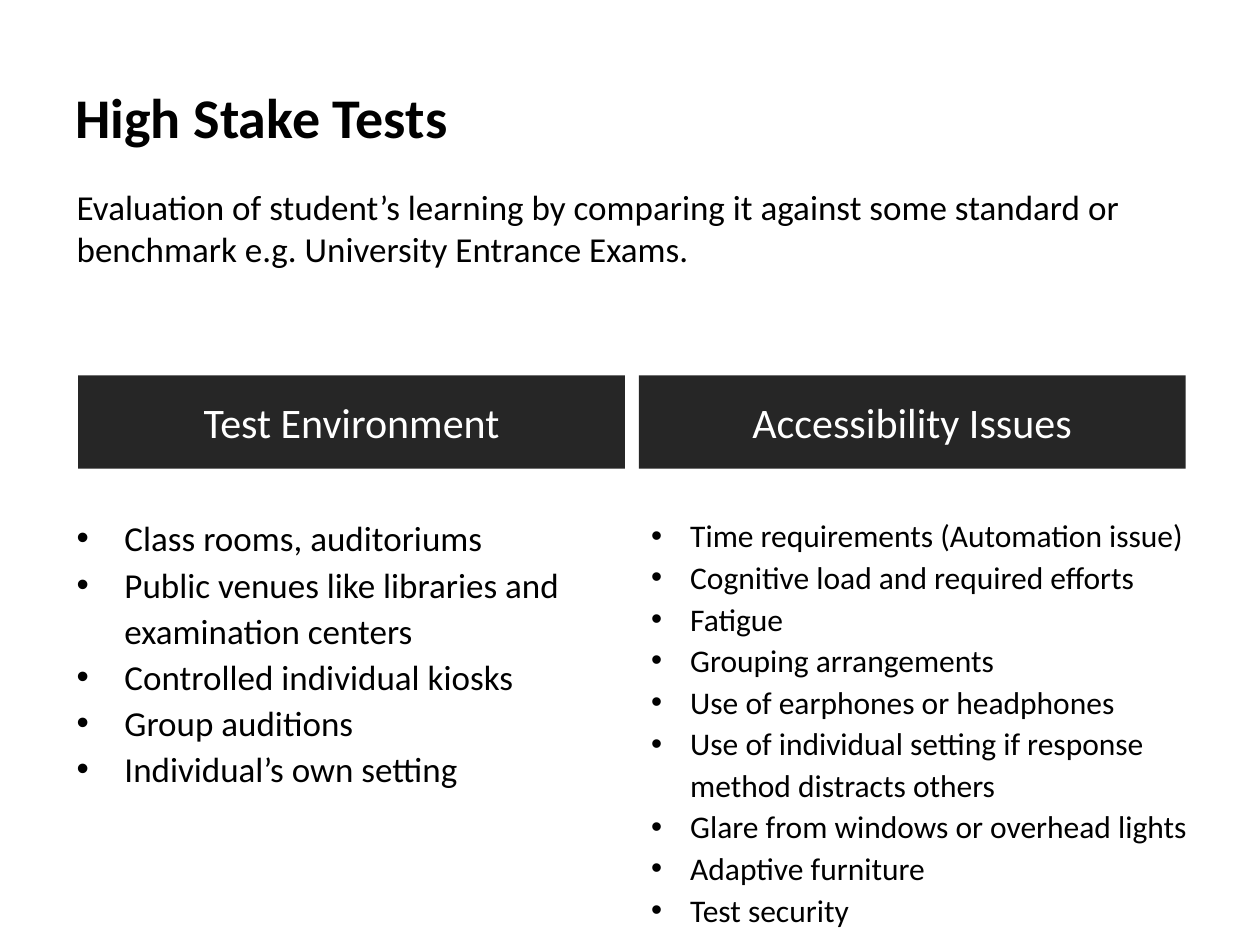
from lxml.etree import SubElement
from pptx import Presentation
from pptx.dml.color import RGBColor
from pptx.enum.shapes import MSO_SHAPE
from pptx.enum.text import MSO_ANCHOR, PP_ALIGN
from pptx.oxml.ns import qn
from pptx.util import Inches, Pt

FONT = "Calibri"
BLACK = RGBColor(0x00, 0x00, 0x00)
WHITE = RGBColor(0xFF, 0xFF, 0xFF)
CHARCOAL = RGBColor(0x26, 0x26, 0x26)

ENVIRONMENTS = [
    "Class rooms, auditoriums",
    "Public venues like libraries and examination centers",
    "Controlled individual kiosks",
    "Group auditions",
    "Individual’s own setting",
]
ISSUES = [
    "Time requirements (Automation issue)",
    "Cognitive load and required efforts",
    "Fatigue",
    "Grouping arrangements",
    "Use of earphones or headphones",
    "Use of individual setting if response\nmethod distracts others",
    "Glare from windows or overhead lights",
    "Adaptive furniture",
    "Test security",
]


def write_text(p, text, size=20, color=BLACK, bold=False, align=PP_ALIGN.LEFT):
    """Fill a paragraph with formatted text."""
    p.text = text
    p.alignment = align
    for r in p.runs:
        r.font.name = FONT
        r.font.size = Pt(size)
        r.font.bold = bold
        r.font.color.rgb = color


def set_indent(p, left, first=0, bullet=None):
    """Set the margin, first-line indent and optional bullet of a paragraph."""
    pPr = p._p.get_or_add_pPr()
    pPr.set("marL", str(Inches(left)))
    pPr.set("indent", str(Inches(first)))
    if bullet:
        SubElement(pPr, qn("a:buFont"), typeface="Arial")
        SubElement(pPr, qn("a:buChar"), char=bullet)


def add_text_box(s, left, top, width, height, anchor=MSO_ANCHOR.TOP):
    """Add a wrapping text box and return its text frame."""
    tf = s.shapes.add_textbox(
        Inches(left), Inches(top), Inches(width), Inches(height)
    ).text_frame
    tf.word_wrap = True
    tf.vertical_anchor = anchor
    return tf


def add_heading(s, left, text):
    """Add a dark column heading bar."""
    sp = s.shapes.add_shape(
        MSO_SHAPE.RECTANGLE, Inches(left), Inches(2.98), Inches(4.34), Inches(0.74)
    )
    sp.shadow.inherit = False
    sp.fill.solid()
    sp.fill.fore_color.rgb = CHARCOAL
    sp.line.fill.background()
    tf = sp.text_frame
    tf.vertical_anchor = MSO_ANCHOR.MIDDLE
    write_text(tf.paragraphs[0], text, size=24, color=WHITE, align=PP_ALIGN.CENTER)


def add_bullets(s, left, height, items, size, margin, hanging):
    """Add a column of bulleted items."""
    tf = add_text_box(s, left, 4.02, 5, height)
    for i, item in enumerate(items):
        p = tf.add_paragraph() if i else tf.paragraphs[0]
        write_text(p, item, size=size)
        p.line_spacing = 1.1
        set_indent(p, margin, -hanging, bullet="•")


def main():
    """Build the slide and save it."""
    prs = Presentation()
    prs.slide_width, prs.slide_height = Inches(10), Inches(7.5)
    s = prs.slides.add_slide(prs.slide_layouts[6])

    add_heading(s, 0.62, "Test Environment")
    add_heading(s, 5.07, "Accessibility Issues")

    title = add_text_box(s, 0.5, 0.3, 9, 1.25, anchor=MSO_ANCHOR.MIDDLE)
    write_text(title.paragraphs[0], "High Stake Tests", size=32, bold=True)

    intro = add_text_box(s, 0.01, 1.42, 9.89, 0.77).paragraphs[0]
    write_text(
        intro,
        "Evaluation of student’s learning by comparing it against some standard "
        "or benchmark e.g. University Entrance Exams.",
    )
    set_indent(intro, 0.5)

    add_bullets(s, 0.01, 2.32, ENVIRONMENTS, size=20, margin=0.88, hanging=0.38)
    add_bullets(s, 5.07, 3.43, ISSUES, size=18, margin=0.31, hanging=0.31)

    prs.save("out.pptx")


if __name__ == "__main__":
    main()
